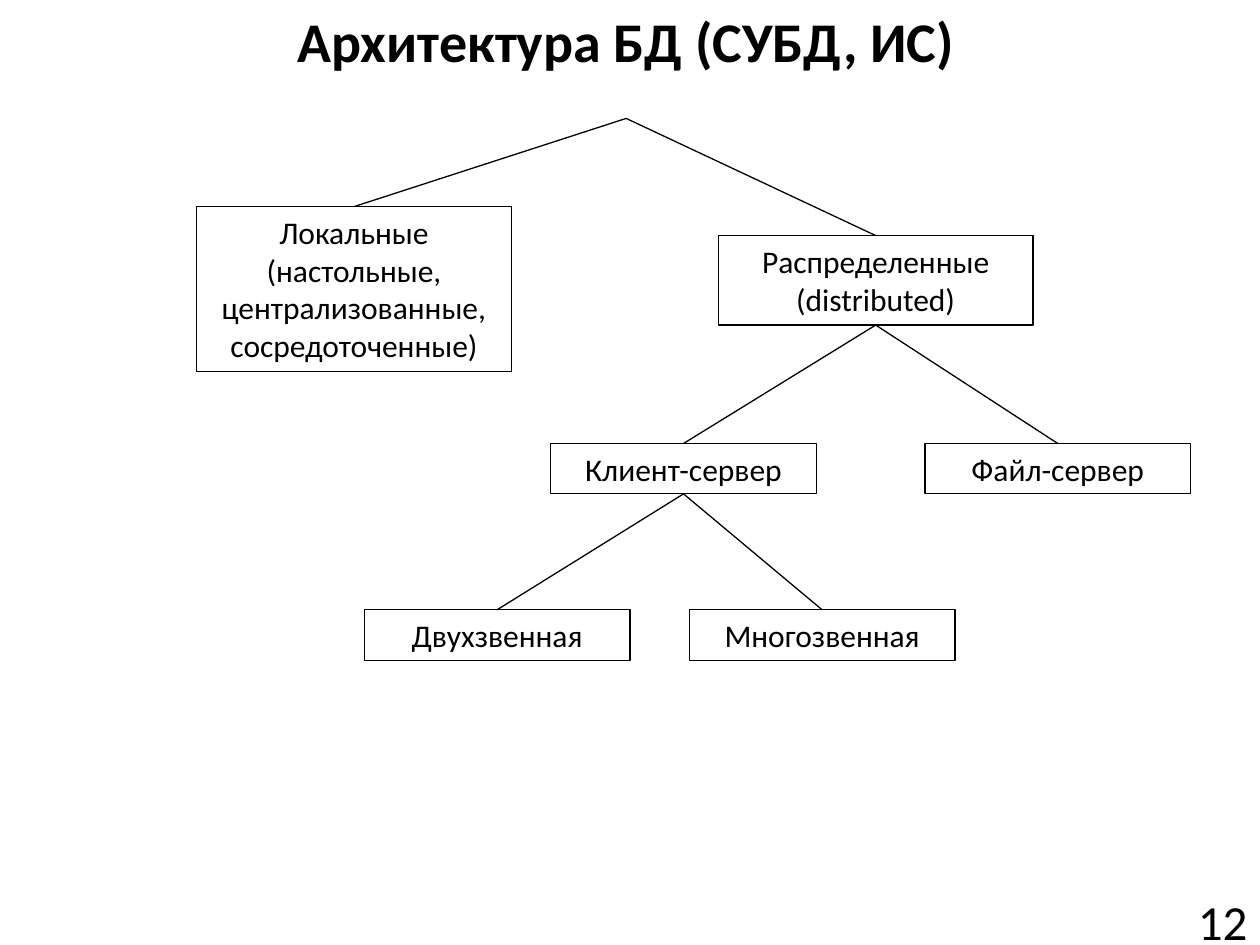
from dataclasses import dataclass

from lxml.etree import SubElement
from pptx import Presentation
from pptx.dml.color import RGBColor
from pptx.enum.shapes import MSO_CONNECTOR as Connector, MSO_SHAPE as Shape
from pptx.enum.text import MSO_ANCHOR as Anchor, MSO_AUTO_SIZE as AutoSize, PP_ALIGN as Align
from pptx.oxml.ns import qn
from pptx.util import Inches, Pt

# Grid of 100 columns by 75 rows
COLUMNS, ROWS = 100, 75
WIDTH, HEIGHT = Inches(10), Inches(7.5)
BLACK = "000000"
FONT = "Calibri"
TOP, BOTTOM = 0, 2
WIDE, NARROW = 25, 21.1  # box widths in columns
LINE_ROWS = 4  # height of a one-line box


@dataclass(frozen=True)
class Node:
    name: str
    parent: str
    text: str
    column: float
    row: float
    columns: float = NARROW
    rows: float = LINE_ROWS


NODES = (
    Node("local", "title", "Локальные (настольные, централизованные, сосредоточенные)",
         15.6, 16.4, WIDE, 13.1),
    Node("distributed", "title", "Распределенные (distributed)", 57, 18.7, WIDE, 7.1),
    Node("client_server", "distributed", "Клиент-сервер", 43.7, 35.2),
    Node("file_server", "distributed", "Файл-сервер", 73.4, 35.2),
    Node("two_tier", "client_server", "Двухзвенная", 28.9, 48.4),
    Node("multi_tier", "client_server", "Многозвенная", 54.7, 48.4),
)


def area(column: float, row: float, columns: float, rows: float) -> tuple[int, ...]:
    """Turn grid cells into left, top, width and height."""
    return (round(column * WIDTH / COLUMNS), round(row * HEIGHT / ROWS),
            round(columns * WIDTH / COLUMNS), round(rows * HEIGHT / ROWS))


def color(value: str) -> RGBColor:
    return RGBColor.from_string(value)


def write(box, text: str, *, size: float, bold: bool = False, align=Align.CENTER,
          anchor=Anchor.TOP, auto_size=AutoSize.NONE) -> None:
    frame = box.text_frame
    frame.word_wrap = True
    frame.auto_size = auto_size
    frame.vertical_anchor = anchor
    para = frame.paragraphs[0]
    para.alignment = align
    span = para.add_run()
    span.text = text
    span.font.name = FONT
    span.font.size = Pt(size)
    span.font.bold = bold
    span.font.color.rgb = color(BLACK)


def outline(line) -> None:
    line.color.rgb = color(BLACK)
    line.width = Pt(0.75)


def draw_node(page, node: Node):
    box = page.shapes.add_shape(
        Shape.RECTANGLE, *area(node.column, node.row, node.columns, node.rows))
    box.shadow.inherit = False
    box.fill.background()
    outline(box.line)
    write(box, node.text, size=18, auto_size=AutoSize.SHAPE_TO_FIT_TEXT)
    return box


def draw_branch(page, parent, child) -> None:
    branch = page.shapes.add_connector(Connector.STRAIGHT, 0, 0, 0, 0)
    branch.begin_connect(parent, BOTTOM)
    branch.end_connect(child, TOP)
    outline(branch.line)
    SubElement(branch._element.spPr, qn("a:effectLst"))


def main() -> None:
    deck = Presentation()
    deck.slide_width, deck.slide_height = WIDTH, HEIGHT
    page = deck.slides.add_slide(deck.slide_layouts[5])

    # Title, also the root of the tree
    title = page.shapes.title
    title.left, title.top, title.width, title.height = area(4.7, 0, 90, 9.4)
    write(title, "Архитектура БД (СУБД, ИС)", size=32, bold=True)

    # Page number
    number = page.shapes.add_textbox(*area(89.8, 71.1, 10.2, 3.9))
    write(number, "12", size=28, align=Align.RIGHT, anchor=Anchor.MIDDLE)

    # Tree boxes, then the branches between them
    boxes = {"title": title}
    for node in NODES:
        boxes[node.name] = draw_node(page, node)
    for node in NODES:
        draw_branch(page, boxes[node.parent], boxes[node.name])

    deck.save("out.pptx")


if __name__ == "__main__":
    main()
